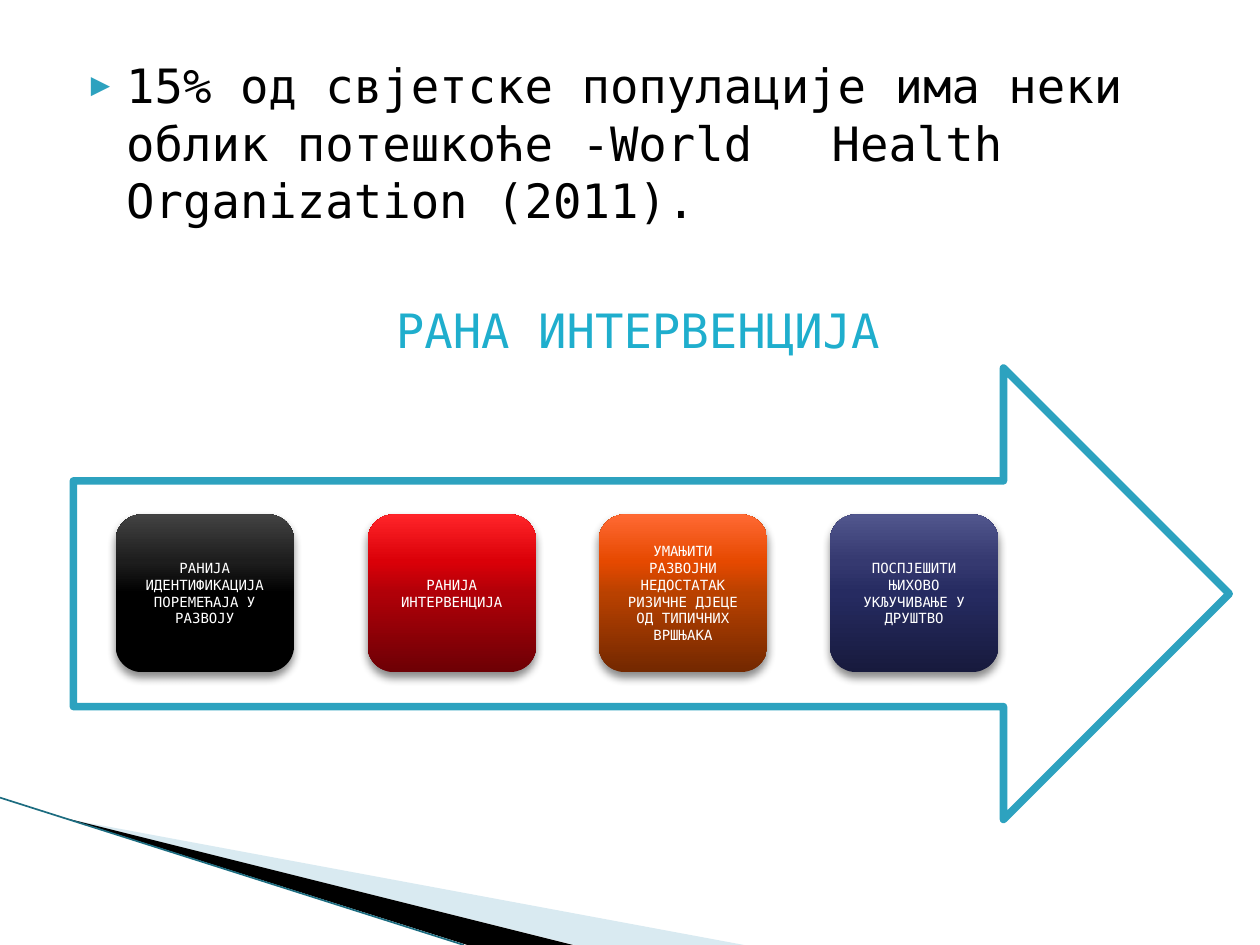
from lxml.etree import SubElement
from pptx import Presentation
from pptx.dml.color import RGBColor
from pptx.enum.shapes import MSO_CONNECTOR as Connector, MSO_SHAPE as Preset
from pptx.enum.text import MSO_ANCHOR as Anchor, PP_ALIGN as Align
from pptx.oxml.ns import qn
from pptx.util import Cm, Pt

WHITE = RGBColor(0xFF, 0xFF, 0xFF)
BLACK = RGBColor(0x00, 0x00, 0x00)
TEAL = RGBColor(0x2D, 0xA2, 0xBF)
HEADING = RGBColor(0x1F, 0xAE, 0xCD)
PALE_BLUE = RGBColor(0xD9, 0xEA, 0xF1)
DARK_TEAL = RGBColor(0x1C, 0x6C, 0x80)
STOPS = (0, 50, 70, 100)

# Text and the gradient colours from bottom to top
STEPS = [
    ("РАНИЈА ИДЕНТИФИКАЦИЈА ПОРЕМЕЋАЈА У РАЗВОЈУ",
     ("000000", "000000", "1D1D1D", "424242")),
    ("РАНИЈА ИНТЕРВЕНЦИЈА",
     ("6D0005", "B00008", "DA0008", "FF2429")),
    ("УМАЊИТИ РАЗВОЈНИ НЕДОСТАТАК РИЗИЧНЕ ДЈЕЦЕ ОД ТИПИЧНИХ ВРШЊАКА",
     ("732800", "B94100", "E64900", "FF6933")),
    ("ПОСПЈЕШИТИ ЊИХОВО УКЉУЧИВАЊЕ У ДРУШТВО",
     ("171A3D", "262B61", "353970", "51568D")),
]


def add_element(parent, tag, **attributes):
    return SubElement(parent, qn(tag), {k: str(v) for k, v in attributes.items()})


def add_color(parent, color, alpha=None):
    element = add_element(parent, "a:srgbClr", val=color)
    if alpha is not None:
        add_element(element, "a:alpha", val=alpha * 1000)


class SlideBuilder:
    font = "DejaVu Sans Mono"
    body_size = Pt(27)
    step_size = Pt(8)

    def __init__(self, slide):
        self.slide = slide
        self.shapes = slide.shapes

    def format_text(self, paragraph, size, color):
        for run in paragraph.runs:
            run.font.name = self.font
            run.font.size = size
            run.font.color.rgb = color

    def wedge(self, points, color):
        points = [(Cm(x), Cm(y)) for x, y in points]
        builder = self.shapes.build_freeform(*points[0], scale=1.0)
        builder.add_line_segments(points[1:], close=True)
        shape = builder.convert_to_shape()
        shape.shadow.inherit = False
        shape.fill.solid()
        shape.fill.fore_color.rgb = color
        shape.line.fill.background()

    def line(self, start, end, color, width):
        connector = self.shapes.add_connector(
            Connector.STRAIGHT, *map(Cm, start), *map(Cm, end))
        connector.line.color.rgb = color
        connector.line.width = Pt(width)
        add_element(connector._element.spPr, "a:effectLst")

    def body(self, left, top, width, height, statement, heading):
        placeholder = self.slide.placeholders[1]
        placeholder.left, placeholder.top = Cm(left), Cm(top)
        placeholder.width, placeholder.height = Cm(width), Cm(height)
        frame = placeholder.text_frame
        frame.vertical_anchor = Anchor.TOP
        first, second = frame.paragraphs[0], frame.add_paragraph()
        first.text, second.text = statement, heading
        for paragraph, color in ((first, BLACK), (second, HEADING)):
            properties = paragraph._p.get_or_add_pPr()
            properties.set("marL", str(Cm(1.02)))
            properties.set("indent", str(-Cm(0.71)))
            self.format_text(paragraph, self.body_size, color)
        bullet = first._p.pPr
        add_color(add_element(bullet, "a:buClr"), TEAL)
        add_element(bullet, "a:buSzPct", val=68000)
        add_element(bullet, "a:buFont", typeface=self.font)
        add_element(bullet, "a:buChar", char="▶")
        add_element(second._p.pPr, "a:buNone")
        first.space_before = Pt(0)
        second.space_before = Pt(41)
        second.alignment = Align.CENTER
        for paragraph in (first, second):
            paragraph.line_spacing = 1.02

    def arrow(self, left, top, width, height):
        shape = self.shapes.add_shape(
            Preset.RIGHT_ARROW, Cm(left), Cm(top), Cm(width), Cm(height))
        shape.shadow.inherit = False
        shape.fill.solid()
        shape.fill.fore_color.rgb = WHITE
        shape.line.color.rgb = TEAL
        shape.line.width = Pt(4.33)
        add_element(shape.line._get_or_add_ln(), "a:round")

    def step(self, left, top, width, height, text, colors):
        shape = self.shapes.add_shape(
            Preset.ROUNDED_RECTANGLE, Cm(left), Cm(top), Cm(width), Cm(height))
        shape.line.fill.background()
        shape.shadow.inherit = False
        self.gradient(shape, colors)
        self.drop_shadow(shape)
        frame = shape.text_frame
        frame.word_wrap = True
        frame.vertical_anchor = Anchor.MIDDLE
        frame.text = text
        paragraph = frame.paragraphs[0]
        paragraph.alignment = Align.CENTER
        self.format_text(paragraph, self.step_size, WHITE)

    def gradient(self, shape, colors):
        """Fill the shape from bottom to top."""
        shape.fill.gradient()
        fill = shape._element.spPr.find(qn("a:gradFill"))
        for child in list(fill):
            fill.remove(child)
        stops = add_element(fill, "a:gsLst")
        for position, color in zip(STOPS, colors):
            add_color(add_element(stops, "a:gs", pos=position * 1000), color)
        add_element(fill, "a:lin", ang=270 * 60000, scaled=0)

    def drop_shadow(self, shape):
        effects = shape._element.spPr.find(qn("a:effectLst"))
        shadow = add_element(effects, "a:outerShdw", blurRad=Pt(5), dist=Pt(3),
                             dir=90 * 60000, rotWithShape=0)
        add_color(shadow, BLACK, alpha=45)


def main():
    presentation = Presentation()
    presentation.slide_width, presentation.slide_height = Cm(25.4), Cm(19.05)
    slide = presentation.slides.add_slide(presentation.slide_layouts[1])
    title = slide.shapes.title._element
    title.getparent().remove(title)

    builder = SlideBuilder(slide)
    builder.wedge([(1.4, 16.52), (15, 19.05), (11.58, 19.05)], PALE_BLUE)
    builder.wedge([(1.35, 16.5), (11.55, 19.05), (9.42, 19.05)], BLACK)
    builder.line((0, 16.08), (9.35, 19.05), DARK_TEAL, 0.95)
    builder.body(
        1.27, 0.98, 22.86, 15.48,
        "15% од свјетске популације има неки облик потешкоће "
        "-World \tHealth Organization (2011).",
        "РАНА ИНТЕРВЕНЦИЈА")
    builder.arrow(1.48, 7.42, 23.3, 9.1)

    first_left, first_width = 2.33, 3.6
    next_left, next_width, pitch = 7.41, 3.4, 4.66
    for index, (text, colors) in enumerate(STEPS):
        left = next_left + (index - 1) * pitch if index else first_left
        width = next_width if index else first_width
        builder.step(left, 10.37, width, 3.18, text, colors)

    presentation.save("out.pptx")


if __name__ == "__main__":
    main()
